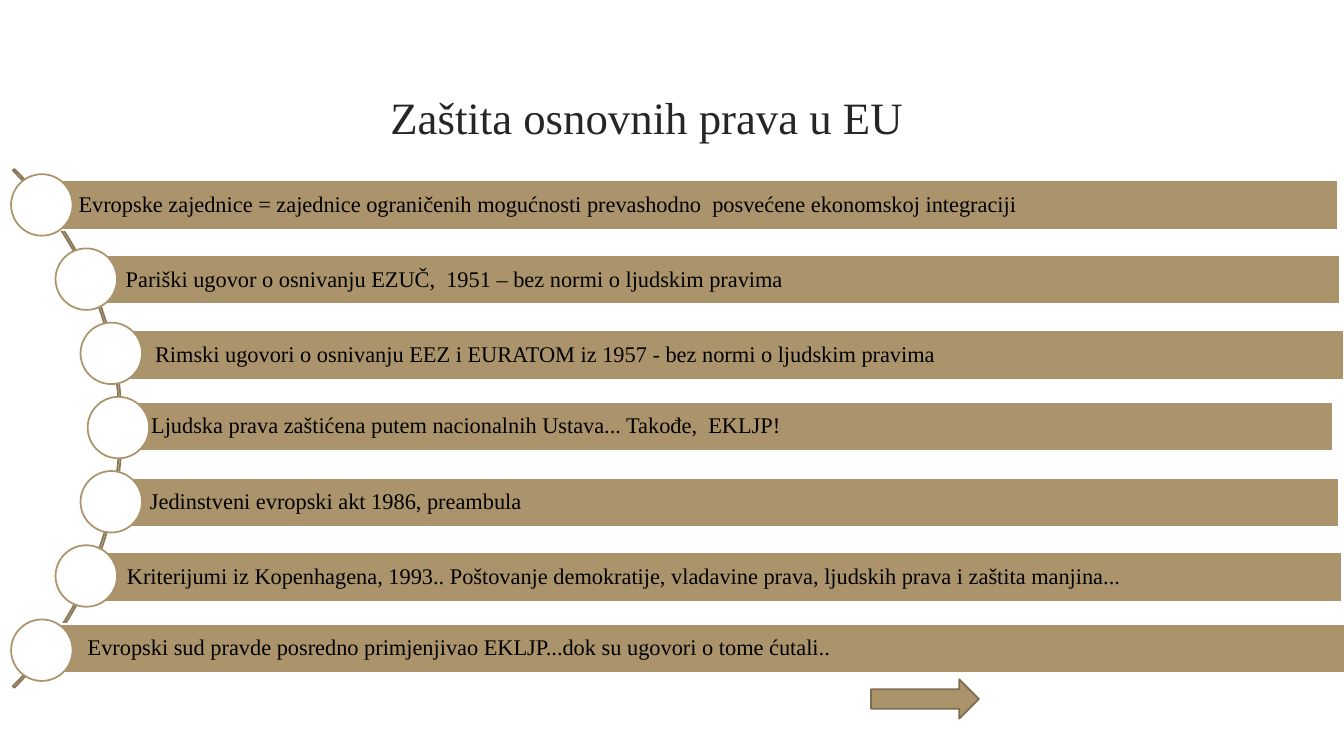
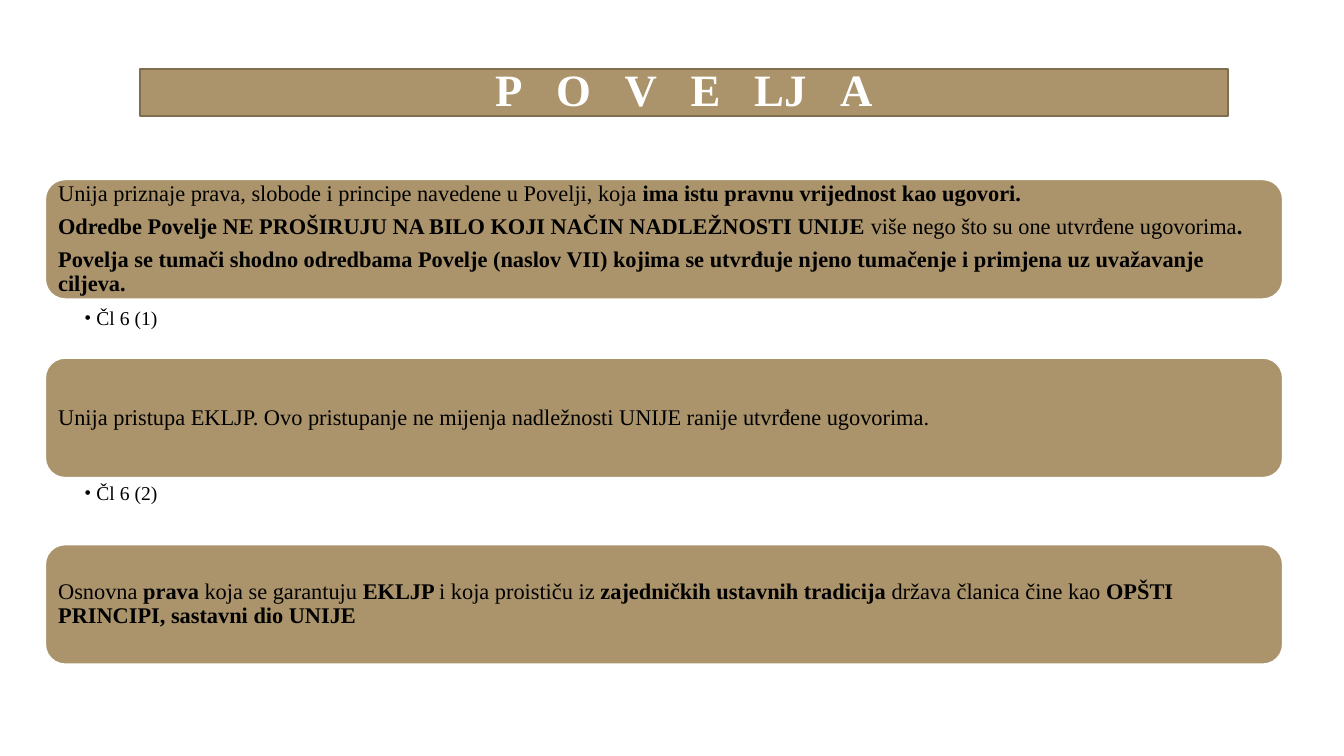
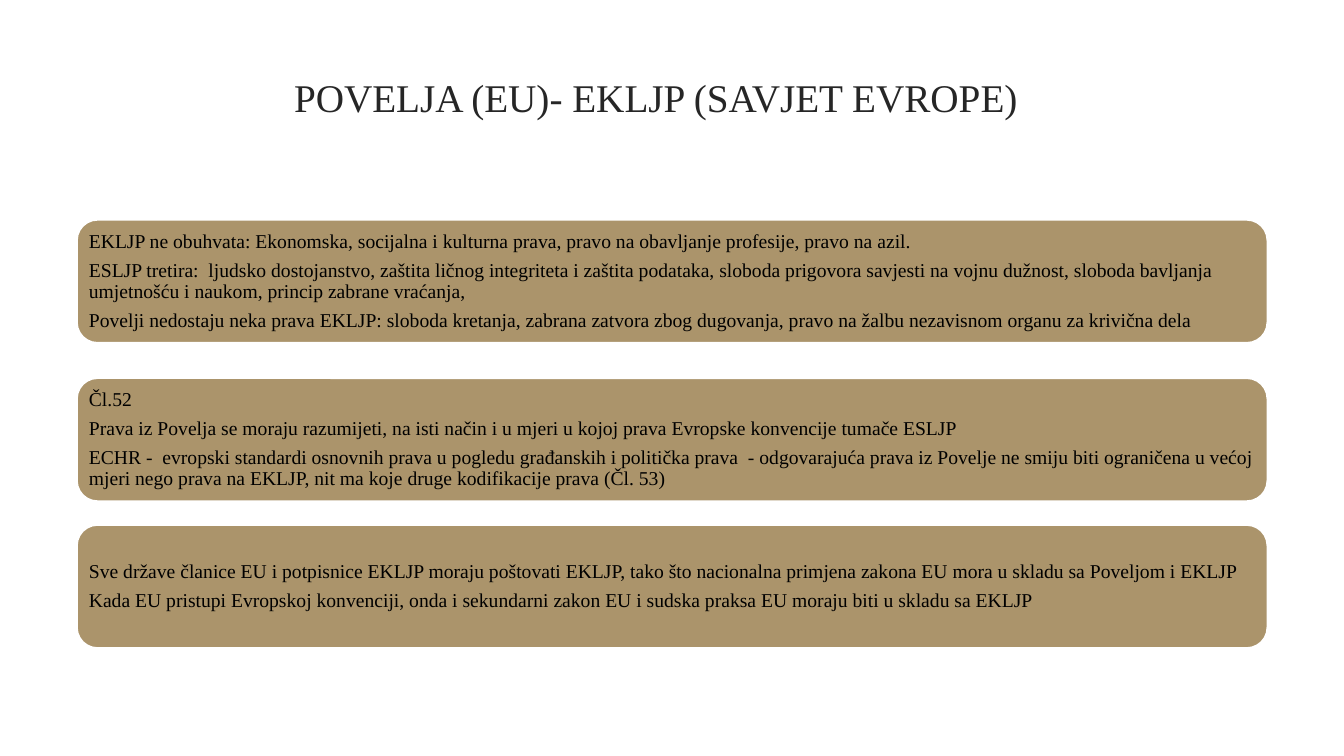
"""Build three slides on the protection of fundamental rights in the EU."""
from pptx import Presentation
from pptx.dml.color import RGBColor
from pptx.enum.shapes import MSO_SHAPE
from pptx.enum.text import MSO_ANCHOR, MSO_AUTO_SIZE, PP_ALIGN
from pptx.util import Cm, Pt
from lxml import etree

HUES = {"sand": "AB946B", "edge": "7F6D4F", "arc": "897756",
        "white": "FFFFFF", "ink": "000000", "head": "262626"}
FACE = "Times New Roman"


def draw(slide, kind, box, fill, line):
    item = slide.shapes.add_shape(kind, *map(Cm, box))
    item.shadow.inherit = False
    if fill:
        item.fill.solid()
        item.fill.fore_color.rgb = RGBColor.from_string(HUES[fill])
    else:
        item.fill.background()
    item.line.color.rgb = RGBColor.from_string(HUES[line])
    item.line.width = Pt(1.25)
    return item


def write(frame, texts, size, hue="ink", align=PP_ALIGN.LEFT, pads=None,
          anchor=MSO_ANCHOR.MIDDLE):
    look = {"word_wrap": True, "auto_size": MSO_AUTO_SIZE.NONE,
            "vertical_anchor": anchor}
    sides = ("margin_left", "margin_top", "margin_right", "margin_bottom")
    look.update(zip(sides, map(Cm, pads or (0.25, 0.13, 0.25, 0.13))))
    for name, value in look.items():
        setattr(frame, name, value)
    for i, text in enumerate(texts):
        para = frame.add_paragraph() if i else frame.paragraphs[0]
        form = {"alignment": align, "line_spacing": 0.9, "space_before": Pt(0),
                "space_after": Pt(0 if align == PP_ALIGN.CENTER else size * 0.39)}
        for name, value in form.items():
            setattr(para, name, value)
        for j, part in enumerate(text.split("*")):
            if part:
                run = para.add_run()
                run.text = part
                font = {"name": FACE, "size": Pt(size), "bold": j % 2 == 1}
                for name, value in font.items():
                    setattr(run.font, name, value)
                run.font.color.rgb = RGBColor.from_string(HUES[hue])


deck = Presentation()
deck.slide_width, deck.slide_height = Cm(33.87), Cm(19.05)

heads = [
    ("Zaštita osnovnih prava u EU", 32, "head", (0.1, 2.13, 32.41, 1.8)),
    ("*P* *O* *V* *E* *LJ* *A*", 32, "white", (3.53, 1.73, 27.41, 1.19)),
    ("POVELJA (EU)- EKLJP (SAVJET EVROPE)", 28, "head", (1.63, 1.52, 29.79, 2.01)),
]
slides = []
for text, size, hue, box in heads:
    slide = deck.slides.add_slide(deck.slide_layouts[5])
    title = slide.shapes.title
    title.left, title.top, title.width, title.height = map(Cm, box)
    write(title.text_frame, [text], size, hue, PP_ALIGN.CENTER)
    slides.append(slide)
first, second, third = slides

arc = draw(first, MSO_SHAPE.BLOCK_ARC, (-15.42, 1.55, 18.49, 18.49), None, "arc")
for i, value in enumerate((189, 27, 0.003)):
    arc.adjustments[i] = value
bars = [
    (0.99, 4.55, 32.72, 0.28, "Evropske zajednice = zajednice ograničenih mogućnosti prevashodno  posvećene ekonomskoj integraciji"),
    (2.18, 6.43, 31.6, 1.4, "Pariški ugovor o osnivanju EZUČ,  1951 – bez normi o ljudskim pravima"),
    (2.92, 8.33, 30.96, 2.03, "Rimski ugovori o osnivanju EEZ i EURATOM iz 1957 - bez normi o ljudskim pravima"),
    (2.82, 10.13, 30.78, 2.21, "Ljudska prava zaštićena putem nacionalnih Ustava... Takođe,  EKLJP!"),
    (2.79, 12.04, 30.96, 2.03, "Jedinstveni evropski akt 1986, preambula"),
    (2.21, 13.92, 31.6, 1.4, "Kriterijumi iz Kopenhagena, 1993.. Poštovanje demokratije, vladavine prava, ljudskih prava i zaštita manjina..."),
    (1.22, 15.72, 32.72, 0.28, "Evropski sud pravde posredno primjenjivao EKLJP...dok su ugovori o tome ćutali.."),
]
for i, (left, top, width, dot, text) in enumerate(bars):
    bar = draw(first, MSO_SHAPE.RECTANGLE, (left, top, width, 1.24), "sand", "white")
    write(bar.text_frame, [text], 16, pads=(0.99, 0.1, 0.1, 0.1))
    draw(first, MSO_SHAPE.OVAL, (dot, 4.39 + i * 1.87, 1.55, 1.55), "white", "sand")
draw(first, MSO_SHAPE.RIGHT_ARROW, (21.95, 17.12, 2.72, 0.99), "sand", "edge")

banner = second.shapes.title
banner.fill.solid()
banner.fill.fore_color.rgb = RGBColor.from_string(HUES["sand"])
banner.line.color.rgb = RGBColor.from_string(HUES["edge"])
banner.line.width = Pt(1.25)
for run in banner.text_frame.paragraphs[0].runs:
    if run.text == " ":
        run.font._element.set("spc", "1600")

cards = [
    (second, 16, 0.18, (1.14, 4.52, 31.19, 3.02), [
        "Unija priznaje prava, slobode i principe navedene u Povelji, koja *ima istu pravnu vrijednost kao ugovori.*",
        "*Odredbe Povelje NE PROŠIRUJU NA BILO KOJI NAČIN NADLEŽNOSTI UNIJE *više nego što su one utvrđene ugovorima*.*",
        "*Povelja se tumači shodno odredbama Povelje (naslov VII) kojima se utvrđuje njeno tumačenje i primjena uz uvažavanje ciljeva.*"]),
    (second, 16, 0.18, (1.14, 9.02, 31.19, 3.02), [
        "Unija pristupa EKLJP. Ovo pristupanje ne mijenja nadležnosti UNIJE ranije utvrđene ugovorima."]),
    (second, 16, 0.18, (1.14, 13.72, 31.19, 3.02), [
        "Osnovna *prava *koja se garantuju *EKLJP *i koja proističu iz *zajedničkih ustavnih tradicija *država članica čine kao *OPŠTI PRINCIPI, sastavni dio UNIJE*"]),
    (third, 14, 0.15, (1.94, 5.54, 30, 3.1), [
        "EKLJP ne obuhvata: Ekonomska, socijalna i kulturna prava, pravo na obavljanje profesije, pravo na azil.",
        "ESLJP tretira:  ljudsko dostojanstvo, zaštita ličnog integriteta i zaštita podataka, sloboda prigovora savjesti na vojnu dužnost, sloboda bavljanja umjetnošću i naukom, princip zabrane vraćanja,",
        "Povelji nedostaju neka prava EKLJP: sloboda kretanja, zabrana zatvora zbog dugovanja, pravo na žalbu nezavisnom organu za krivična dela"]),
    (third, 14, 0.15, (1.94, 9.53, 30, 3.1), [
        "Čl.52",
        "Prava iz Povelja se moraju razumijeti, na isti način i u mjeri u kojoj prava Evropske konvencije tumače ESLJP",
        "ECHR -  evropski standardi osnovnih prava u pogledu građanskih i politička prava  - odgovarajuća prava iz Povelje ne smiju biti ograničena u većoj mjeri nego prava na EKLJP, nit ma koje druge kodifikacije prava (Čl. 53)"]),
    (third, 14, 0.15, (1.94, 13.23, 30, 3.1), [
        "Sve države članice EU i potpisnice EKLJP moraju poštovati EKLJP, tako što nacionalna primjena zakona EU mora u skladu sa Poveljom i EKLJP",
        "Kada EU pristupi Evropskoj konvenciji, onda i sekundarni zakon EU i sudska praksa EU moraju biti u skladu sa EKLJP"]),
]
for slide, size, pad, box, texts in cards:
    card = draw(slide, MSO_SHAPE.ROUNDED_RECTANGLE, box, "sand", "white")
    write(card.text_frame, texts, size, pads=(pad,) * 4)

for top, text in ((7.72, "Čl 6 (1)"), (12.14, "Čl 6 (2)")):
    note = second.shapes.add_textbox(Cm(1.14), Cm(top), Cm(31.19), Cm(1.2))
    props = note.text_frame.paragraphs[0]._p.get_or_add_pPr()
    props.set("marL", str(Cm(0.3)))
    props.set("indent", str(Cm(-0.3)))
    space = props.nsmap["a"]
    etree.SubElement(props, f"{{{space}}}buFont", typeface=FACE)
    etree.SubElement(props, f"{{{space}}}buChar", char="•")
    write(note.text_frame, [text], 14, pads=(0.99, 0.05, 0.28, 0.05),
          anchor=MSO_ANCHOR.TOP)

deck.save("out.pptx")
